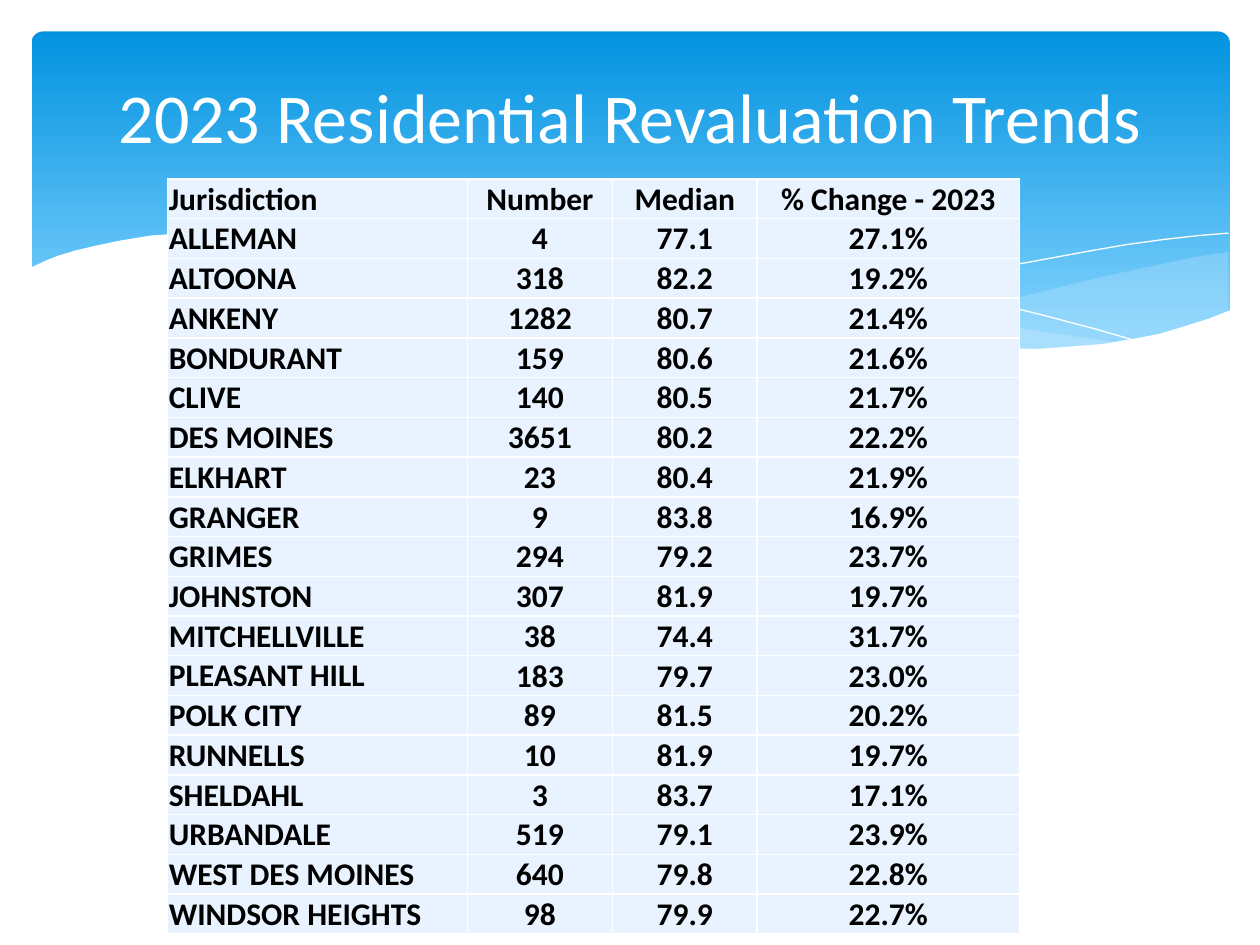
from pptx import Presentation
from pptx.dml.color import RGBColor
from pptx.enum.shapes import MSO_SHAPE
from pptx.enum.text import MSO_ANCHOR, PP_ALIGN
from pptx.oxml import parse_xml
from pptx.oxml.ns import nsdecls, qn
from pptx.util import Inches, Pt
from lxml.etree import SubElement

FONT = "Calibri"
WHITE = "FFFFFF"
TITLE = "2023 Residential Revaluation Trends"
HEADINGS = ("Jurisdiction", "Number", "Median", "% Change - 2023")
TRENDS = (
    ("ALLEMAN", "4", "77.1", "27.1%"),
    ("ALTOONA", "318", "82.2", "19.2%"),
    ("ANKENY", "1282", "80.7", "21.4%"),
    ("BONDURANT", "159", "80.6", "21.6%"),
    ("CLIVE", "140", "80.5", "21.7%"),
    ("DES MOINES", "3651", "80.2", "22.2%"),
    ("ELKHART", "23", "80.4", "21.9%"),
    ("GRANGER", "9", "83.8", "16.9%"),
    ("GRIMES", "294", "79.2", "23.7%"),
    ("JOHNSTON", "307", "81.9", "19.7%"),
    ("MITCHELLVILLE", "38", "74.4", "31.7%"),
    ("PLEASANT HILL", "183", "79.7", "23.0%"),
    ("POLK CITY", "89", "81.5", "20.2%"),
    ("RUNNELLS", "10", "81.9", "19.7%"),
    ("SHELDAHL", "3", "83.7", "17.1%"),
    ("URBANDALE", "519", "79.1", "23.9%"),
    ("WEST DES MOINES", "640", "79.8", "22.8%"),
    ("WINDSOR HEIGHTS", "98", "79.9", "22.7%"),
)
COLUMN_WIDTHS = (2.38, 1.15, 1.15, 2.08)

RIGHT_WAVE = (
    (9.5, 1.75), (9.23, 1.79), (8.96, 1.85), (8.66, 1.91), (8.36, 1.98),
    (7.8, 2.12), (7.28, 2.23), (6.81, 2.32), (6.36, 2.4), (6.66, 2.44),
    (6.94, 2.47), (7.2, 2.5), (7.44, 2.52), (7.78, 2.53), (8.1, 2.52),
    (8.38, 2.5), (8.64, 2.47), (8.88, 2.42), (9.1, 2.37), (9.24, 2.32),
    (9.5, 2.22),
)
LONG_WAVE = (
    (8.68, 2.48), (8.41, 2.44), (7.82, 2.35), (7.16, 2.22), (6.43, 2.06),
    (6.04, 1.97), (5.59, 1.86), (5.16, 1.78), (4.77, 1.71), (4.4, 1.66),
    (3.95, 1.62), (3.55, 1.6), (3.19, 1.61), (2.88, 1.63), (2.61, 1.66),
    (2.98, 1.71), (3.37, 1.78), (3.79, 1.86), (4.24, 1.97), (4.66, 2.07),
    (5.05, 2.15), (5.41, 2.23), (5.76, 2.3), (6.09, 2.36), (6.4, 2.41),
    (6.7, 2.45), (6.97, 2.49), (7.36, 2.52), (7.71, 2.53), (8.03, 2.53),
    (8.32, 2.52), (8.51, 2.5),
)
FALLING_LINE = (
    (2.84, 1.7), (3.03, 1.67), (3.28, 1.64), (3.62, 1.62), (3.91, 1.62),
    (4.25, 1.63), (4.64, 1.65), (5.08, 1.69), (5.57, 1.75), (6.11, 1.83),
    (6.7, 1.94), (7.35, 2.08), (8.06, 2.26), (8.44, 2.36), (8.82, 2.47),
)
RISING_LINE = (
    (5.88, 2.32), (6.28, 2.21), (6.7, 2.1), (7.23, 1.98), (7.81, 1.85),
    (8.41, 1.74), (8.7, 1.69), (8.99, 1.65), (9.26, 1.62), (9.5, 1.6),
)
WHITE_WAVE = (
    (9.52, 2.21), (9.34, 2.28), (9.15, 2.34), (8.95, 2.4), (8.74, 2.44),
    (8.5, 2.48), (8.25, 2.5), (7.98, 2.52), (7.68, 2.51), (7.36, 2.5),
    (7.01, 2.47), (6.63, 2.43), (6.23, 2.37), (5.78, 2.29), (5.3, 2.2),
    (4.78, 2.08), (4.22, 1.95), (3.66, 1.82), (3.15, 1.72), (2.67, 1.65),
    (2.25, 1.61), (1.86, 1.59), (1.52, 1.59), (1.21, 1.6), (0.94, 1.62),
    (0.7, 1.66), (0.51, 1.7), (0.34, 1.74), (0.21, 1.78), (0.11, 1.82),
    (-0.02, 1.88), (-0.02, 3.04), (9.52, 3.04),
)


def colour(code):
    return RGBColor.from_string(code)


def add_span(para, text, size, code, bold=False):
    span = para.add_run()
    span.text = text
    font = span.font
    font.name, font.size, font.bold = FONT, Pt(size), bold
    font.color.rgb = colour(code)


def draw_curve(page, box, points, closed):
    left, top = box[:2]
    places = [(Inches(left + x), Inches(top + y)) for x, y in points]
    builder = page.shapes.build_freeform(*places[0])
    builder.add_line_segments(places[1:], close=closed)
    curve = builder.convert_to_shape()
    curve.shadow.inherit = False
    return curve


def add_wave(page, box, points, code, opacity=100):
    wave = draw_curve(page, box, points, True)
    wave.line.fill.background()
    wave.fill.solid()
    wave.fill.fore_color.rgb = colour(code)
    if opacity < 100:
        shade = wave._element.spPr.find(qn("a:solidFill"))[0]
        SubElement(shade, qn("a:alpha"), val=str(opacity * 1000))


def add_hairline(page, box, points):
    hairline = draw_curve(page, box, points, False)
    hairline.fill.background()
    hairline.line.color.rgb = colour(WHITE)
    hairline.line.width = Pt(0)


def add_banner(page, box):
    banner = page.shapes.add_shape(MSO_SHAPE.ROUNDED_RECTANGLE, *map(Inches, box))
    banner.adjustments[0] = 0.034
    banner.shadow.inherit = False
    banner.line.fill.background()
    banner.fill.gradient()
    banner.fill.gradient_angle = 270
    stops = ((0, "0293E0"), (0.9, "83D3FE"))
    for stop, (position, code) in zip(banner.fill.gradient_stops, stops):
        stop.position = position
        stop.color.rgb = colour(code)
    add_wave(page, box, RIGHT_WAVE, "C6E7FC", 29)
    add_wave(page, box, LONG_WAVE, "C6E7FC", 40)
    add_hairline(page, box, FALLING_LINE)
    add_hairline(page, box, RISING_LINE)
    add_wave(page, box, WHITE_WAVE, WHITE)


def add_title(page, box):
    title = page.shapes.title
    title.left, title.top, title.width, title.height = map(Inches, box)
    page.shapes._spTree.append(title._element)
    title.text_frame.vertical_anchor = MSO_ANCHOR.MIDDLE
    para = title.text_frame.paragraphs[0]
    para.alignment = PP_ALIGN.CENTER
    add_span(para, TITLE, 40, WHITE)


def format_cell(cell, text, column, heading):
    cell.margin_left = cell.margin_right = cell.margin_top = Inches(0.01)
    cell.margin_bottom = 0
    anchors = (MSO_ANCHOR.TOP, MSO_ANCHOR.MIDDLE, MSO_ANCHOR.BOTTOM, MSO_ANCHOR.BOTTOM)
    cell.vertical_anchor = MSO_ANCHOR.BOTTOM if heading else anchors[column]
    cell.fill.solid()
    cell.fill.fore_color.rgb = colour("E8F3FF")
    properties = cell._tc.get_or_add_tcPr()
    for index, side in enumerate("LRTB"):
        properties.insert(index, parse_xml(
            f'<a:ln{side} {nsdecls("a")} w="{Pt(1)}"><a:solidFill>'
            f'<a:srgbClr val="{WHITE}"/></a:solidFill></a:ln{side}>'))
    para = cell.text_frame.paragraphs[0]
    para.alignment = PP_ALIGN.CENTER if column else PP_ALIGN.LEFT
    add_span(para, text, 18, "000000", True)


def add_trends_table(page, box):
    records = (HEADINGS, *TRENDS)
    frame = page.shapes.add_table(len(records), len(HEADINGS), *map(Inches, box))
    table = frame.table
    table.first_row = table.horz_banding = False
    for column, width in zip(table.columns, COLUMN_WIDTHS):
        column.width = Inches(width)
    for row, record in enumerate(records):
        for column, text in enumerate(record):
            format_cell(table.cell(row, column), text, column, row == 0)


def main():
    deck = Presentation()
    deck.slide_width, deck.slide_height = Inches(10), Inches(7.5)
    page = deck.slides.add_slide(deck.slide_layouts[5])
    add_banner(page, (0.25, 0.25, 9.51, 2.7))
    add_title(page, (0.5, 0.23, 9, 1.37))
    add_trends_table(page, (1.33, 1.42, 6.76, 5.86))
    deck.save("out.pptx")


if __name__ == "__main__":
    main()
